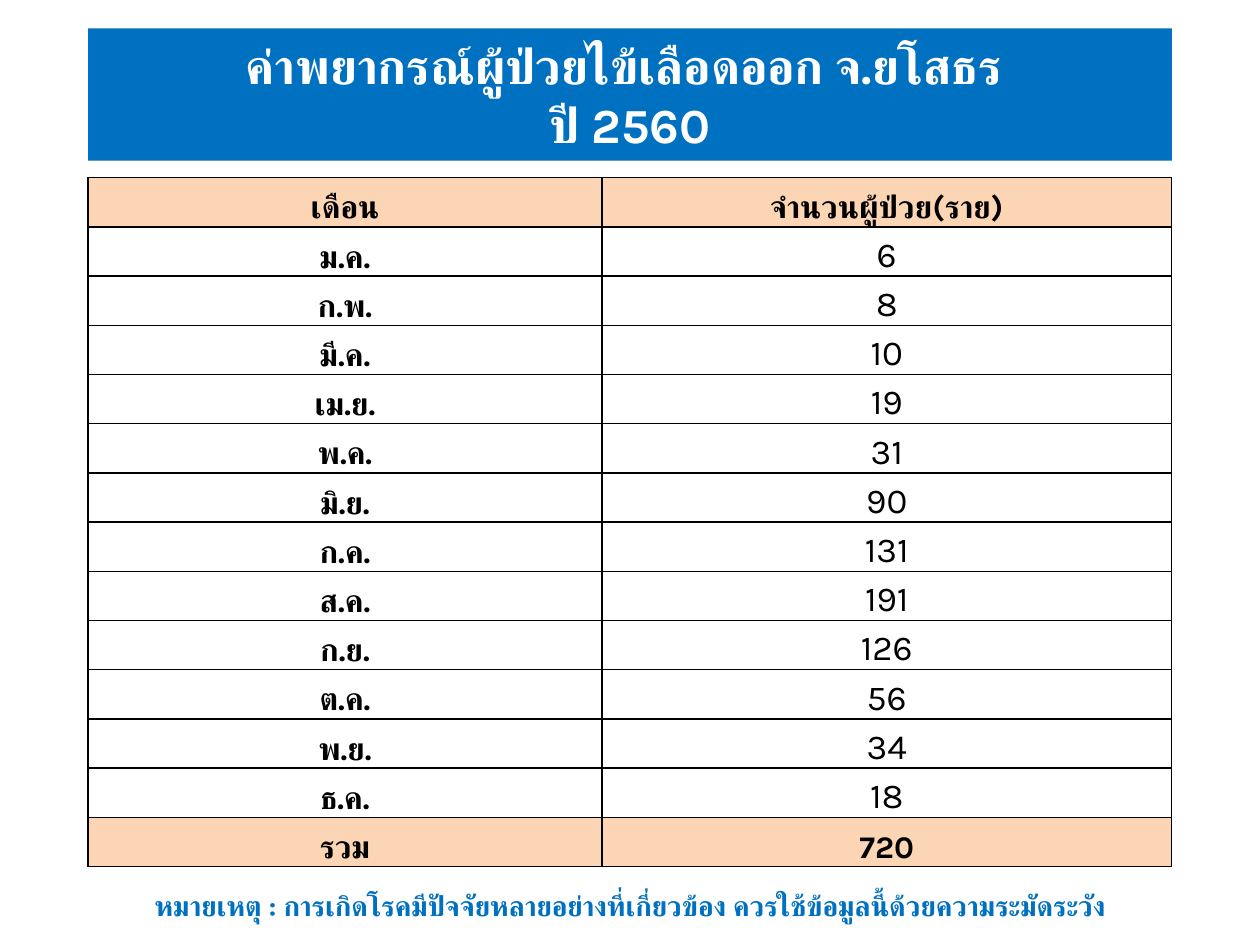
from lxml import etree
from pptx import Presentation
from pptx import util as u
from pptx.dml import color
from pptx.enum import text
from pptx.oxml import ns

WIDTH, HEIGHT = u.Inches(10), u.Inches(7.5)
FONT = "Karla"
BLUE, PEACH, BLACK, WHITE = "0070C0", "FCD5B5", "000000", "FFFFFF"

TITLE = "ค่าพยากรณ์ผู้ป่วยไข้เลือดออก จ.ยโสธร \nปี 2560"
NOTE = "หมายเหตุ : การเกิดโรคมีปัจจัยหลายอย่างที่เกี่ยวข้อง ควรใช้ข้อมูลนี้ด้วยความระมัดระวัง"
HEADER = ("เดือน", "จำนวนผู้ป่วย(ราย)")
CASES = {
    "ม.ค.": 6, "ก.พ.": 8, "มี.ค.": 10, "เม.ย.": 19, "พ.ค.": 31, "มิ.ย.": 90,
    "ก.ค.": 131, "ส.ค.": 191, "ก.ย.": 126, "ต.ค.": 56, "พ.ย.": 34, "ธ.ค.": 18,
}
TOTAL_LABEL = "รวม"


def rgb(value):
    return color.RGBColor.from_string(value)


def share_box(left, top, width, height):
    return [round(share * side) for share, side in
            zip((left, top, width, height), (WIDTH, HEIGHT, WIDTH, HEIGHT))]


def write(frame, content, size, tint, bold=True):
    frame.text = content
    for paragraph in frame.paragraphs:
        paragraph.alignment = text.PP_ALIGN.CENTER
        for run in paragraph.runs:
            formats = {"name": FONT, "size": u.Pt(size), "bold": bold}
            for name, value in formats.items():
                setattr(run.font, name, value)
            run.font.color.rgb = rgb(tint)
            script = etree.SubElement(run.font._element, ns.qn("a:cs"))
            script.set("typeface", FONT)


def add_border(cell):
    properties = cell._tc.get_or_add_tcPr()
    for position, side in enumerate(("lnL", "lnR", "lnT", "lnB")):
        line = etree.Element(ns.qn("a:" + side), w=str(u.Pt(1)))
        fill = etree.SubElement(line, ns.qn("a:solidFill"))
        etree.SubElement(fill, ns.qn("a:srgbClr"), val=BLACK)
        properties.insert(position, line)


def place_title(slide, box):
    title = slide.shapes.title
    for name, value in zip(("left", "top", "width", "height"), box):
        setattr(title, name, value)
    title.fill.solid()
    title.fill.fore_color.rgb = rgb(BLUE)
    frame = title.text_frame
    write(frame, TITLE, 28, WHITE)
    formats = {"word_wrap": True, "auto_size": text.MSO_AUTO_SIZE.SHAPE_TO_FIT_TEXT,
               "vertical_anchor": text.MSO_ANCHOR.MIDDLE}
    for name, value in formats.items():
        setattr(frame, name, value)


def place_table(slide, box):
    total = (TOTAL_LABEL, sum(CASES.values()))
    rows = [HEADER, *CASES.items(), total]
    table = slide.shapes.add_table(len(rows), len(HEADER), *box).table
    month_width = round(box[2] * 0.474)
    for column, width in zip(table.columns, (month_width, box[2] - month_width)):
        column.width = width
    cell_formats = {"margin_left": 0, "margin_right": 0, "margin_top": 0,
                    "margin_bottom": 0, "vertical_anchor": text.MSO_ANCHOR.BOTTOM}
    for row_index, values in enumerate(rows):
        table.rows[row_index].height = box[3] // len(rows)
        highlighted = values in (HEADER, total)
        for column_index, value in enumerate(values):
            cell = table.cell(row_index, column_index)
            for name, setting in cell_formats.items():
                setattr(cell, name, setting)
            if highlighted:
                cell.fill.solid()
                cell.fill.fore_color.rgb = rgb(PEACH)
            else:
                cell.fill.background()
            add_border(cell)
            bold = highlighted or column_index == 0
            write(cell.text_frame, str(value), 18 if bold else 20, BLACK, bold)


def place_note(slide, box):
    frame = slide.shapes.add_textbox(*box).text_frame
    frame.word_wrap = True
    frame.auto_size = text.MSO_AUTO_SIZE.SHAPE_TO_FIT_TEXT
    write(frame, NOTE, 16, BLUE)


def main():
    presentation = Presentation()
    presentation.slide_width, presentation.slide_height = WIDTH, HEIGHT
    slide = presentation.slides.add_slide(presentation.slide_layouts.get_by_name("Title Only"))
    left, width = 0.07, 0.86
    place_title(slide, share_box(left, 0.03, width, 0.14))
    place_table(slide, share_box(left, 1.41 / 7.5, width, 5.47 / 7.5))
    place_note(slide, share_box(0.047, 7 / 7.5, 0.906, 0.05))
    presentation.save("out.pptx")


if __name__ == "__main__":
    main()
